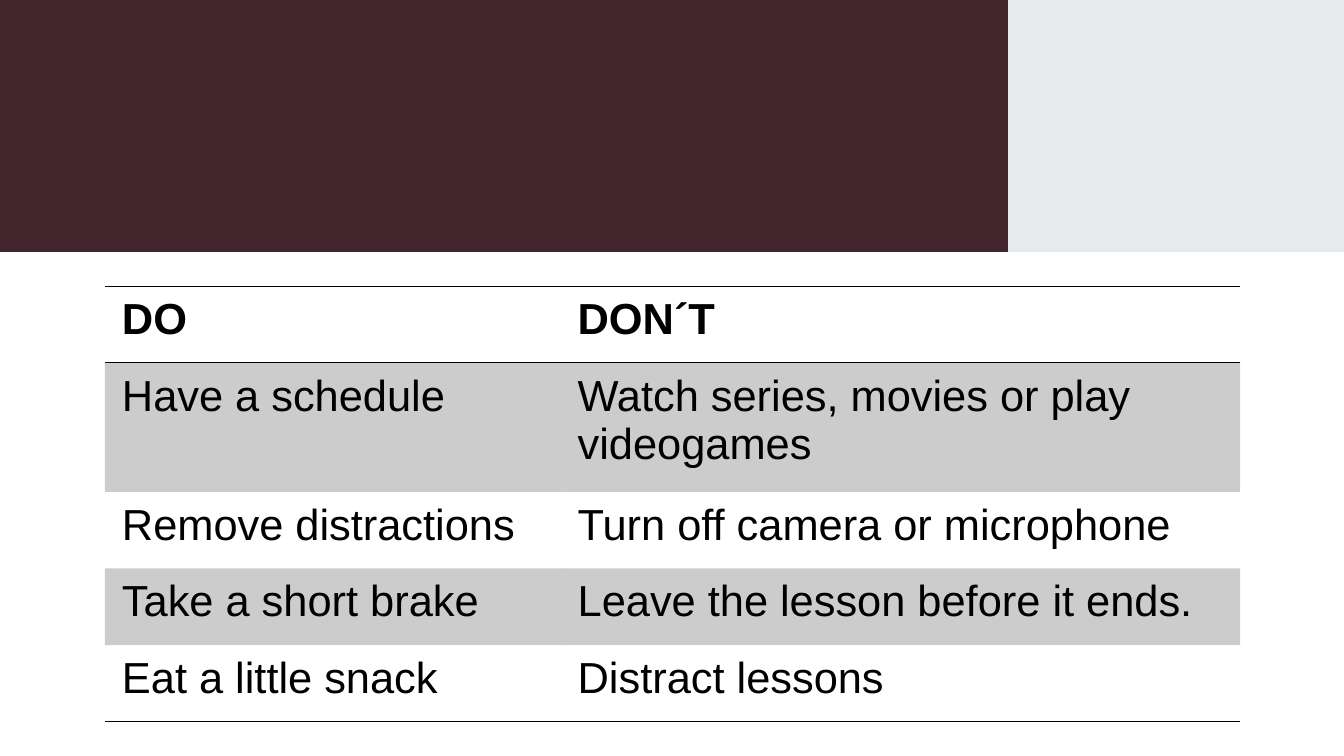
from lxml.etree import SubElement
from pptx import Presentation
from pptx.dml.color import RGBColor
from pptx.enum.shapes import MSO_SHAPE
from pptx.oxml.ns import qn
from pptx.util import Inches, Pt

WINE = RGBColor(0x41, 0x24, 0x2C)
MIST = RGBColor(0xE2, 0xE5, 0xE8)
WHITE = RGBColor(0xFF, 0xFF, 0xFF)
BLACK = RGBColor(0x00, 0x00, 0x00)
NO_STYLE = "{2D5ABB26-0587-4C30-8999-92F81FD0307C}"

ADVICE = [
    ("DO", "DON´T"),
    ("Have a schedule", "Watch series, movies or play videogames"),
    ("Remove distractions", "Turn off camera or microphone"),
    ("Take a short brake", "Leave the lesson before it ends."),
    ("Eat a little snack", "Distract lessons"),
]
COL_WIDTHS = [4.52, 6.74]
ROW_HEIGHTS = [0.76, 1.28, 0.76, 0.76, 0.76]


class SlideBuilder:
    font = "Arial"
    size = Pt(31)

    def __init__(self, slide):
        self.s = slide

    def paint(self, fill, color, opacity=100):
        """Set a solid fill, with opacity in percent."""
        fill.solid()
        fill.fore_color.rgb = color
        if opacity < 100:
            clr = fill._xPr.find(qn("a:solidFill"))[0]
            SubElement(clr, qn("a:alpha"), val=str(opacity * 1000))

    def rect(self, x, y, w, h, color, opacity=100):
        sp = self.s.shapes.add_shape(
            MSO_SHAPE.RECTANGLE, Inches(x), Inches(y), Inches(w), Inches(h))
        sp.shadow.inherit = False
        sp.line.fill.background()
        self.paint(sp.fill, color, opacity)

    def border(self, cell, side):
        ln = SubElement(cell._tc.get_or_add_tcPr(), qn(f"a:ln{side}"), w=str(Pt(1)))
        SubElement(SubElement(ln, qn("a:solidFill")), qn("a:srgbClr"), val=str(BLACK))

    def cell(self, cell, text, bold):
        cell.margin_left = cell.margin_right = Inches(0.17)
        cell.margin_top = cell.margin_bottom = Inches(0.09)
        r = cell.text_frame.paragraphs[0].add_run()
        r.text = text
        r.font.name = self.font
        r.font.size = self.size
        r.font.bold = bold
        r.font.color.rgb = BLACK

    def table(self, x, y, rows, widths, heights):
        """Add a table with a ruled header, shaded odd rows and a closing rule."""
        frame = self.s.shapes.add_table(
            len(rows), len(widths), Inches(x), Inches(y),
            Inches(sum(widths)), Inches(sum(heights)))
        tbl = frame.table
        tbl.first_row = tbl.horz_banding = False
        tbl._tbl.tblPr.find(qn("a:tableStyleId")).text = NO_STYLE
        for col, width in zip(tbl.columns, widths):
            col.width = Inches(width)
        for i, (row, height, texts) in enumerate(zip(tbl.rows, heights, rows)):
            row.height = Inches(height)
            for cell, text in zip(row.cells, texts):
                self.cell(cell, text, bold=i == 0)
                if i == 0:
                    self.border(cell, "T")
                if i in (0, len(rows) - 1):
                    self.border(cell, "B")
                if i % 2:
                    self.paint(cell.fill, BLACK, 20)
                else:
                    cell.fill.background()


def main():
    prs = Presentation()
    prs.slide_width, prs.slide_height = Inches(13.33), Inches(7.5)
    s = prs.slides.add_slide(prs.slide_layouts[6])
    b = SlideBuilder(s)
    b.rect(0, 0, 10, 2.5, WINE)
    b.rect(10, 0, 3.33, 2.5, MIST)
    b.rect(10, 0, 3.33, 2.5, WHITE, 20)
    b.table(1.04, 2.84, ADVICE, COL_WIDTHS, ROW_HEIGHTS)
    prs.save("out.pptx")


if __name__ == "__main__":
    main()
